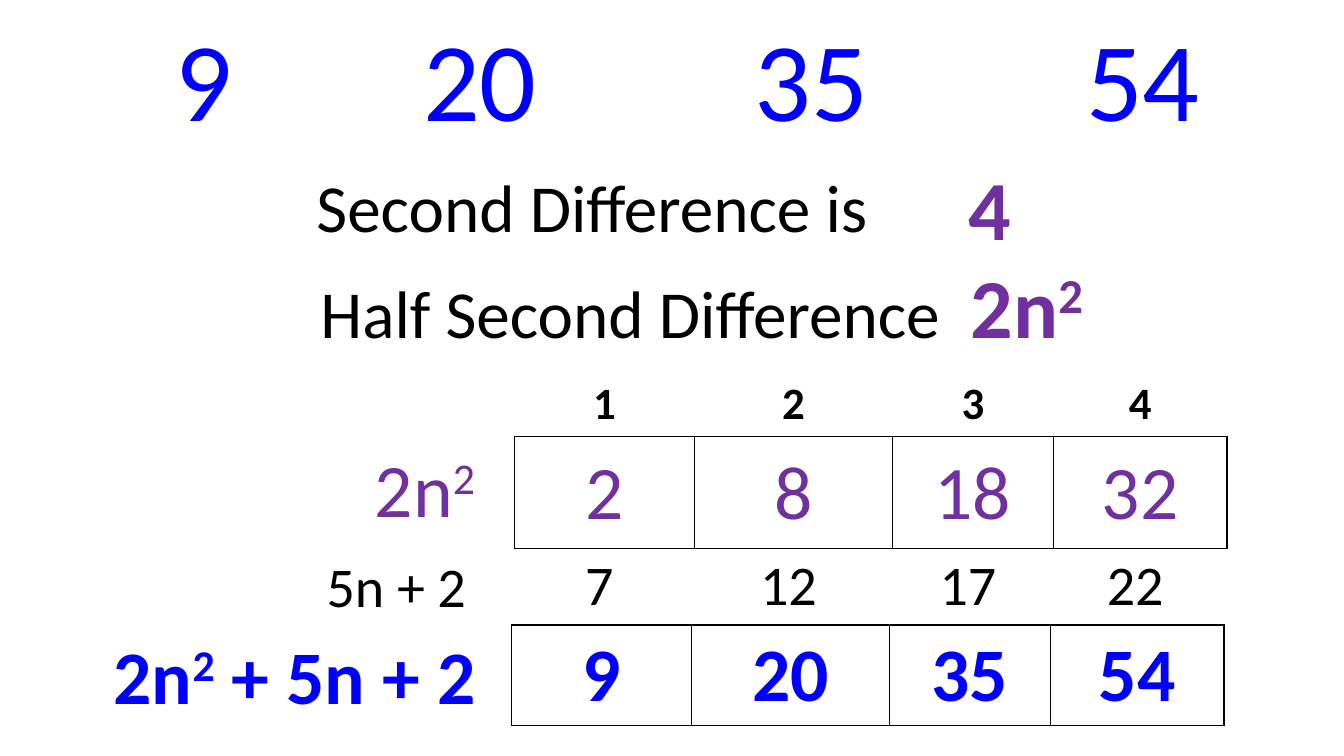
from pptx import Presentation
from pptx.dml.color import RGBColor
from pptx.enum.text import MSO_ANCHOR as ANCHOR, MSO_AUTO_SIZE as AUTO, PP_ALIGN as ALIGN
from pptx.oxml.ns import qn
from pptx.util import Emu, Pt
from lxml.etree import SubElement, Element

PX = 9144
BLACK = RGBColor(0x00, 0x00, 0x00)
BLUE = RGBColor(0x00, 0x00, 0xFF)
PURPLE = RGBColor(0x70, 0x30, 0xA0)
WHITE = RGBColor(0xFF, 0xFF, 0xFF)
SUPER = {"baseline": "30000"}
WIDE_SPACE = {"spc": "1090"}
TERM_COLS = [179, 196, 160, 172]


def px(n):
    return Emu(n * PX)


class Board:
    """Adds text and tables in one style to the current slide."""

    font = "Calibri"

    def __init__(self, prs):
        self.s = prs.slides.add_slide(prs.slide_layouts[6])

    def run(self, p, text, size, color, bold=False, attrs=None):
        r = p.add_run()
        r.text = text
        r.font.name = self.font
        r.font.size = Pt(size)
        r.font.bold = bold
        r.font.color.rgb = color
        for name, value in (attrs or {}).items():
            r.font._element.set(name, value)

    def text(self, box, runs, align=ALIGN.LEFT, wrap=True):
        tf = self.s.shapes.add_textbox(*map(px, box)).text_frame
        tf.word_wrap = wrap
        tf.auto_size = AUTO.SHAPE_TO_FIT_TEXT
        p = tf.paragraphs[0]
        p.alignment = align
        for run in runs:
            self.run(p, *run)

    def borders(self, cell, color, sides):
        tc_pr = cell._tc.get_or_add_tcPr()
        for i, side in enumerate("LRTB"):
            ln = Element(qn("a:ln" + side), w=str(Pt(1)))
            if side in sides:
                fill = SubElement(ln, qn("a:solidFill"))
                SubElement(fill, qn("a:srgbClr"), val=str(color))
            else:
                SubElement(ln, qn("a:noFill"))
            tc_pr.insert(i, ln)

    def table(self, left, top, cols, rows, values, size, color, bold=False,
              line=BLACK, sides=("LRTB",), anchor=ANCHOR.TOP, tight=False):
        tbl = self.s.shapes.add_table(
            len(rows), len(cols), px(left), px(top), px(sum(cols)), px(sum(rows))).table
        tbl.first_row = tbl.horz_banding = False
        for col, width in zip(tbl.columns, cols):
            col.width = px(width)
        for row, height, texts, edges in zip(tbl.rows, rows, values, sides):
            row.height = px(height)
            for cell, text in zip(row.cells, texts):
                cell.fill.background()
                cell.vertical_anchor = anchor
                self.borders(cell, line, edges)
                if tight:
                    cell.margin_left = cell.margin_right = cell.margin_top = px(1)
                    cell.margin_bottom = 0
                if text:
                    p = cell.text_frame.paragraphs[0]
                    p.alignment = ALIGN.CENTER
                    self.run(p, text, size, color, bold)


def main():
    prs = Presentation()
    prs.slide_width, prs.slide_height = px(1333), px(750)
    b = Board(prs)

    terms = ["9", "20", "35", "54"]
    spaced_terms = ["9", "", "20", "", "35", "", "54"]
    b.table(92, 14, [220, 93, 142, 148, 220, 148, 141], [134], [spaced_terms],
            80, BLUE, line=WHITE, anchor=ANCHOR.BOTTOM, tight=True)
    b.table(510, 369, TERM_COLS, [64, 111], [["1", "2", "3", "4"], [""] * 4],
            32, BLACK, True, sides=("B", "LRTB"))
    b.text((308, 248, 811, 111), [
        ("Half Second Difference", 48, BLACK),
        (" ", 48, BLACK, False, WIDE_SPACE),
        ("2n", 60, PURPLE, True),
        ("2", 60, PURPLE, True, SUPER)])
    b.table(507, 620, TERM_COLS, [100], [terms], 54, BLUE, True)
    b.text((304, 159, 575, 91), [("Second Difference is", 48, BLACK)])
    b.text((356, 433, 125, 101), [
        ("2n", 54, PURPLE), ("2", 54, PURPLE, False, SUPER)], ALIGN.RIGHT, False)
    b.text((942, 150, 79, 111), [("4", 60, PURPLE, True)], ALIGN.CENTER)
    b.table(510, 434, TERM_COLS, [111], [["2", "8", "18", "32"]],
            54, PURPLE, sides=("",), anchor=ANCHOR.MIDDLE)
    b.text((312, 542, 160, 77), [("5n + 2", 40, BLACK)], ALIGN.RIGHT, False)
    b.text((103, 619, 403, 101), [
        ("2n", 54, BLUE, True),
        ("2", 54, BLUE, True, SUPER),
        (" + 5n + 2", 54, BLUE, True)])
    b.table(505, 543, TERM_COLS, [77], [["7", "12", "17", "22"]],
            40, BLACK, sides=("",))

    prs.save("out.pptx")


if __name__ == "__main__":
    main()
